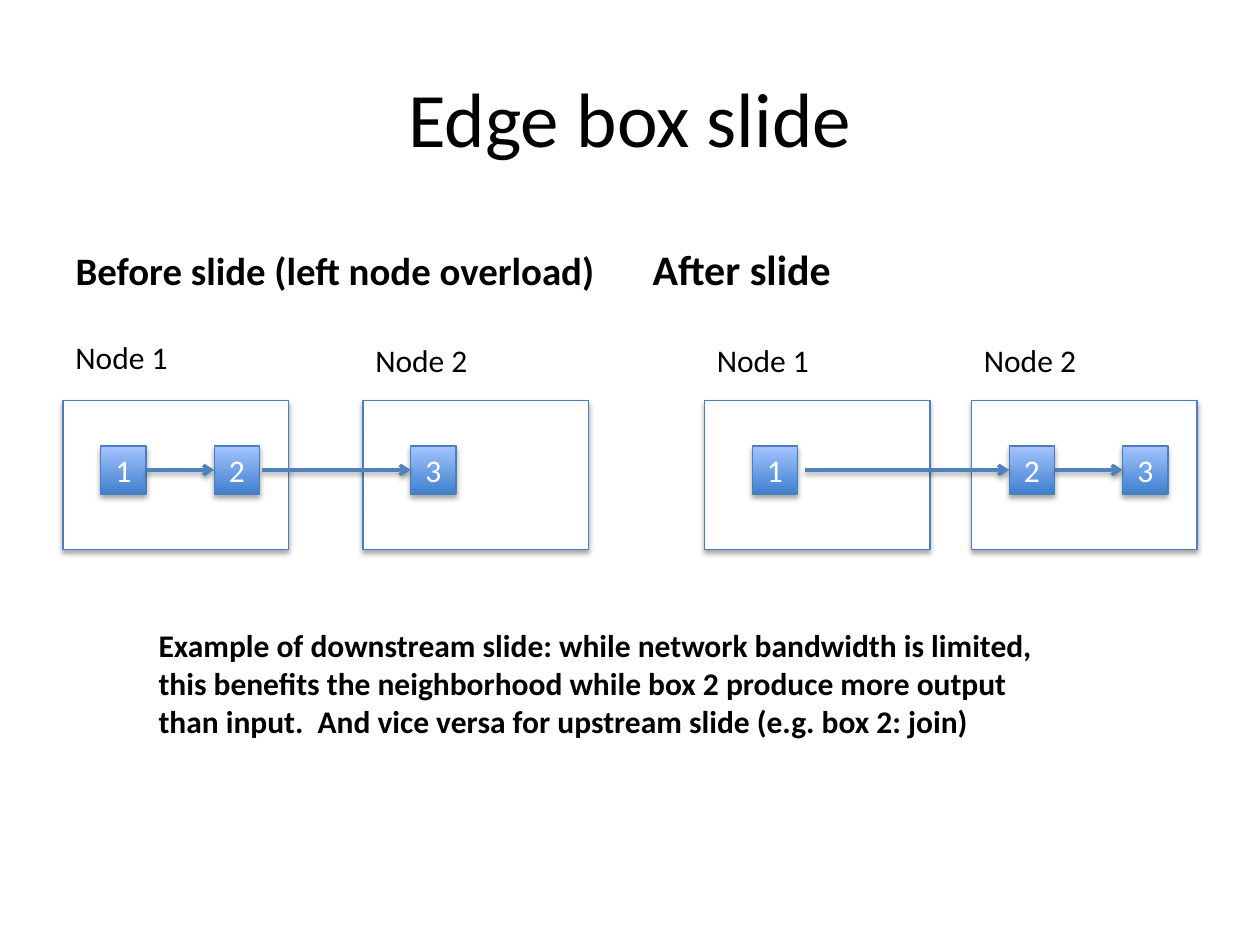
from dataclasses import dataclass

from lxml.etree import SubElement
from pptx import Presentation
from pptx.dml.color import RGBColor
from pptx.enum.shapes import MSO_CONNECTOR as Connector, MSO_SHAPE as Preset
from pptx.enum.text import MSO_ANCHOR as Anchor, MSO_AUTO_SIZE as AutoSize, PP_ALIGN as Align
from pptx.oxml.ns import qn
from pptx.util import Inches, Pt

OUTLINE = "4B7EBC"
BLACK = "000000"
WHITE = "FFFFFF"
NODE_TOP, NODE_WIDTH, NODE_HEIGHT = 3.18, 1.79, 1.18
BOX_TOP, BOX_WIDTH, BOX_HEIGHT = 3.54, 0.36, 0.38
BOX_MIDDLE = BOX_TOP + BOX_HEIGHT / 2


@dataclass
class Node:
    label: str
    left: float
    label_top: float = 2.66


@dataclass
class Box:
    number: str
    left: float


@dataclass
class Scenario:
    heading: str
    heading_left: float
    heading_size: float
    nodes: list[Node]
    boxes: list[Box]
    gaps: list[float]


SCENARIOS = [
    Scenario("Before slide (left node overload)", 0.5, 22.2,
             [Node("Node 1", 0.5, 2.63), Node("Node 2", 2.88)],
             [Box("1", 0.8), Box("2", 1.7), Box("3", 3.26)], [0, 0.02]),
    Scenario("After slide", 5.08, 24,
             [Node("Node 1", 5.59), Node("Node 2", 7.71)],
             [Box("1", 5.97), Box("2", 8.01), Box("3", 8.91)], [0.06, 0]),
]


def rgb(value: str) -> RGBColor:
    return RGBColor.from_string(value)


def write(shape, text: str, *, size: float = 18, color: str = BLACK, bold: bool = False,
          align: Align = Align.LEFT, anchor: Anchor = Anchor.TOP) -> None:
    frame = shape.text_frame
    frame.word_wrap = True
    frame.auto_size = AutoSize.NONE
    frame.vertical_anchor = anchor
    paragraph = frame.paragraphs[0]
    paragraph.alignment = align
    run = paragraph.add_run()
    run.text = text
    run.font.name = "Calibri"
    run.font.size = Pt(size)
    run.font.bold = bold
    run.font.color.rgb = rgb(color)


def place(shape, left: float, top: float, width: float, height: float) -> None:
    shape.left, shape.top = Inches(left), Inches(top)
    shape.width, shape.height = Inches(width), Inches(height)


def cast_shadow(shape, distance: float, opacity: int) -> None:
    effects = SubElement(shape._element.spPr, qn("a:effectLst"))
    shadow = SubElement(effects, qn("a:outerShdw"), blurRad=str(Pt(3.1)),
                        dist=str(Pt(distance)), dir="5400000", rotWithShape="0")
    tint = SubElement(shadow, qn("a:srgbClr"), val=BLACK)
    SubElement(tint, qn("a:alpha"), val=str(opacity * 1000))


def add_rectangle(slide, left: float, top: float, width: float, height: float):
    rectangle = slide.shapes.add_shape(
        Preset.RECTANGLE, Inches(left), Inches(top), Inches(width), Inches(height))
    rectangle.line.color.rgb = rgb(OUTLINE)
    rectangle.line.width = Pt(0.75)
    return rectangle


def add_label(slide, text: str, left: float, top: float, width: float, height: float,
              bold: bool = False) -> None:
    label = slide.shapes.add_textbox(Inches(left), Inches(top), Inches(width), Inches(height))
    write(label, text, bold=bold)


def add_node(slide, node: Node) -> None:
    frame = add_rectangle(slide, node.left, NODE_TOP, NODE_WIDTH, NODE_HEIGHT)
    frame.fill.solid()
    frame.fill.fore_color.rgb = rgb(WHITE)
    cast_shadow(frame, 1.8, 35)
    add_label(slide, node.label, node.left, node.label_top, 1.49, 0.4)


def add_box(slide, box: Box):
    square = add_rectangle(slide, box.left, BOX_TOP, BOX_WIDTH, BOX_HEIGHT)
    square.fill.gradient()
    square.fill.gradient_angle = 90
    for stop, color in zip(square.fill.gradient_stops, ("3F80CE", "A4C4FF")):
        stop.color.rgb = rgb(color)
    cast_shadow(square, 1.8, 35)
    write(square, box.number, color=WHITE, align=Align.CENTER, anchor=Anchor.MIDDLE)
    return square


def add_arrow(slide, source, target, gap: float) -> None:
    middle = Inches(BOX_MIDDLE)
    arrow = slide.shapes.add_connector(
        Connector.STRAIGHT, source.left + source.width + Inches(gap), middle,
        target.left, middle)
    if not gap:
        arrow.begin_connect(source, 3)
    arrow.end_connect(target, 1)
    arrow.line.color.rgb = rgb("4F81BD")
    arrow.line.width = Pt(2)
    SubElement(arrow.line._get_or_add_ln(), qn("a:tailEnd"), type="arrow")
    cast_shadow(arrow, 1.6, 38)


def add_scenario(slide, scenario: Scenario, heading) -> None:
    place(heading, scenario.heading_left, 1.68, 4.42, 0.7)
    write(heading, scenario.heading, size=scenario.heading_size, bold=True,
          anchor=Anchor.BOTTOM)
    for node in scenario.nodes:
        add_node(slide, node)
    squares = [add_box(slide, box) for box in scenario.boxes]
    for source, target, gap in zip(squares, squares[1:], scenario.gaps):
        add_arrow(slide, source, target, gap)


def main() -> None:
    deck = Presentation()
    deck.slide_width, deck.slide_height = Inches(10), Inches(7.5)
    slide = deck.slides.add_slide(deck.slide_layouts[4])
    title, before, before_list, after, after_list = slide.placeholders
    for unused in (before_list, after_list):
        unused._element.getparent().remove(unused._element)

    place(title, 0.5, 0.3, 9, 1.25)
    write(title, "Edge box slide", size=44, align=Align.CENTER, anchor=Anchor.MIDDLE)
    for scenario, heading in zip(SCENARIOS, (before, after)):
        add_scenario(slide, scenario, heading)
    add_label(slide, "Example of downstream slide: while network bandwidth is limited, "
              "this benefits the neighborhood while box 2 produce more output than input.  "
              "And vice versa for upstream slide (e.g. box 2: join)",
              1.16, 4.92, 7.21, 1.01, bold=True)
    deck.save("out.pptx")


if __name__ == "__main__":
    main()
